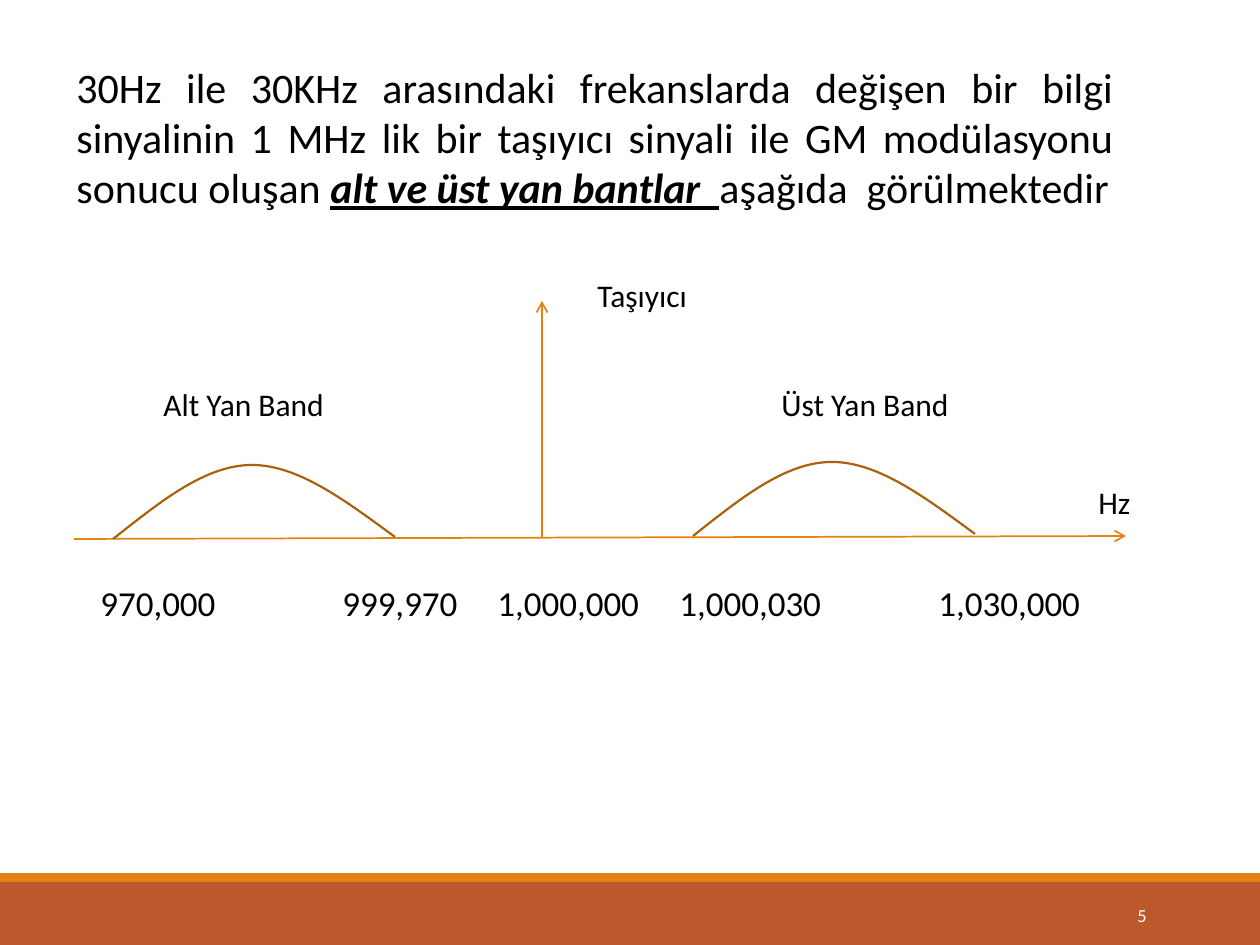
from dataclasses import dataclass

from lxml.etree import SubElement
from pptx import Presentation
from pptx.dml.color import RGBColor
from pptx.enum.shapes import MSO_CONNECTOR as Connector, MSO_SHAPE as Preset
from pptx.enum.text import MSO_ANCHOR as Anchor, MSO_AUTO_SIZE as AutoSize, PP_ALIGN as Align
from pptx.oxml.ns import qn
from pptx.util import Pt

EMU_PER_PX = 914400 / 126


@dataclass(frozen=True)
class Theme:
    font: str = "Calibri"
    text: str = "000000"
    number: str = "FFFFFF"
    axis: str = "E48312"
    curve: str = "A9610D"
    footer: str = "BD582C"
    body_size: float = 24
    tick_size: float = 20
    label_size: float = 18
    number_size: float = 10.5


@dataclass(frozen=True)
class Bar:
    top: int
    height: int
    color: str


@dataclass(frozen=True)
class Span:
    text: str
    style: tuple[str, ...] = ()


@dataclass(frozen=True)
class Label:
    left: int
    top: int
    width: int
    height: int
    spans: tuple[Span, ...]
    size: float
    align: Align = Align.LEFT
    anchor: Anchor = Anchor.TOP
    fit: AutoSize = AutoSize.SHAPE_TO_FIT_TEXT
    color: str = Theme.text
    tabs: tuple[int, ...] = ()


@dataclass(frozen=True)
class Arrow:
    start: tuple[int, int]
    end: tuple[int, int]


THEME = Theme()
WIDTH, HEIGHT = 1260, 945

BARS = (Bar(882, 63, THEME.footer), Bar(873, 9, THEME.axis))
ARROWS = (Arrow((542, 538), (542, 301)), Arrow((74, 539), (1126, 536)))
BAND_STARTS = ((693, 536), (113, 539))
BAND_CURVE = ((47, -37), (92, -74), (139, -74), (186, -74), (234, -37), (282, -2))
FREQUENCIES = ("970,000", "999,970", "1,000,000", "1,000,030", "1,030,000")

LABELS = (
    Label(64, 55, 1062, 165, (
        Span("30Hz ile 30KHz arasındaki frekanslarda değişen bir bilgi sinyalinin "
             "1 MHz lik bir taşıyıcı sinyali ile GM modülasyonu sonucu oluşan "),
        Span("alt ve üst yan bantlar  ", ("bold", "italic", "underline")),
        Span("aşağıda  görülmektedir"),
    ), THEME.body_size, align=Align.JUSTIFY),
    Label(585, 270, 195, 50, (Span("Taşıyıcı"),), THEME.label_size),
    Label(769, 379, 207, 50, (Span("Üst Yan Band"),), THEME.label_size),
    Label(151, 379, 207, 50, (Span("Alt Yan Band"),), THEME.label_size),
    Label(1086, 477, 98, 50, (Span("Hz"),), THEME.label_size),
    Label(64, 575, 1108, 97, (Span("\t" + "\t".join(FREQUENCIES)),), THEME.tick_size,
          tabs=(24, 266, 421, 603, 862)),
    Label(1023, 890, 136, 50, (Span("5"),), THEME.number_size, align=Align.RIGHT,
          anchor=Anchor.MIDDLE, fit=AutoSize.NONE, color=THEME.number),
)


def px(value: int) -> int:
    return round(value * EMU_PER_PX)


def rgb(color: str) -> RGBColor:
    return RGBColor.from_string(color)


def style_line(shape, color: str, points: float) -> None:
    shape.line.color.rgb = rgb(color)
    shape.line.width = Pt(points)


def draw_bar(page, bar: Bar) -> None:
    shape = page.shapes.add_shape(Preset.RECTANGLE, 0, px(bar.top), px(WIDTH), px(bar.height))
    shape.shadow.inherit = False
    shape.fill.solid()
    shape.fill.fore_color.rgb = rgb(bar.color)
    shape.line.fill.background()


def draw_arrow(page, arrow: Arrow) -> None:
    ends = [px(value) for value in arrow.start + arrow.end]
    line = page.shapes.add_connector(Connector.STRAIGHT, *ends)
    style_line(line, THEME.axis, 1)
    SubElement(line.line._get_or_add_ln(), qn("a:tailEnd"), type="arrow")
    SubElement(line.element.spPr, qn("a:effectLst"))


def draw_band(page, start: tuple[int, int]) -> None:
    left, base = start
    builder = page.shapes.build_freeform(px(left), px(base))
    builder.add_line_segments([(px(left + x), px(base + y)) for x, y in BAND_CURVE], close=False)
    curve = builder.convert_to_shape()
    curve.shadow.inherit = False
    curve.fill.background()
    style_line(curve, THEME.curve, 1.25)
    outline = next(curve.element.iter(qn("a:path")))
    segments = outline.findall(qn("a:lnTo"))
    for first in range(0, len(segments), 3):
        bezier = SubElement(outline, qn("a:cubicBezTo"))
        for segment in segments[first:first + 3]:
            bezier.append(segment[0])
            outline.remove(segment)


def draw_label(page, label: Label) -> None:
    box = page.shapes.add_textbox(px(label.left), px(label.top), px(label.width), px(label.height))
    frame = box.text_frame
    frame_format = {"word_wrap": True, "auto_size": label.fit, "vertical_anchor": label.anchor}
    for name, value in frame_format.items():
        setattr(frame, name, value)
    para = frame.paragraphs[0]
    para.alignment = label.align
    if label.tabs:
        stops = SubElement(para._p.get_or_add_pPr(), qn("a:tabLst"))
        for position in label.tabs:
            SubElement(stops, qn("a:tab"), pos=str(px(position)), algn="l")
    for span in label.spans:
        run = para.add_run()
        run.text = span.text
        font_format = {"name": THEME.font, "size": Pt(label.size)}
        font_format.update(dict.fromkeys(span.style, True))
        for name, value in font_format.items():
            setattr(run.font, name, value)
        run.font.color.rgb = rgb(label.color)


def main() -> None:
    deck = Presentation()
    deck.slide_width, deck.slide_height = px(WIDTH), px(HEIGHT)
    page = deck.slides.add_slide(deck.slide_layouts[6])
    for draw, items in (
        (draw_bar, BARS),
        (draw_arrow, ARROWS),
        (draw_band, BAND_STARTS),
        (draw_label, LABELS),
    ):
        for item in items:
            draw(page, item)
    deck.save("out.pptx")


if __name__ == "__main__":
    main()
